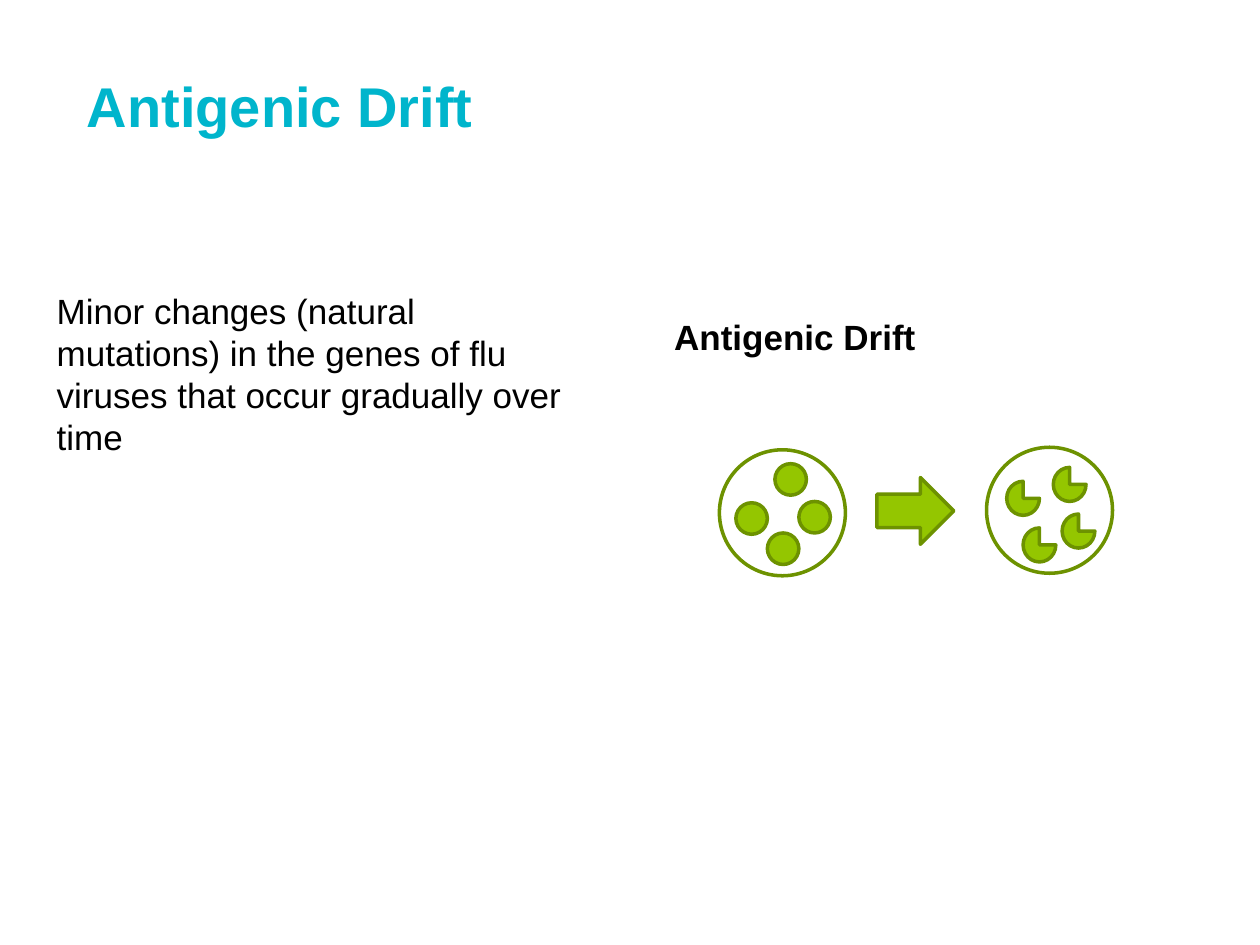
from pptx import Presentation
from pptx import util as u
from pptx.dml.color import RGBColor
from pptx.enum import shapes, text
from pptx.oxml.ns import qn

TITLE, BLACK, FILL, EDGE = "00B5CC", "000000", "94C600", "6D9200"
MSO = shapes.MSO_SHAPE


def rgb(value):
    return RGBColor.from_string(value)


class SlideBuilder:
    def __init__(self, prs, layout):
        self.font = "Arial"
        self.slide = prs.slides.add_slide(prs.slide_layouts[layout])

    def placeholder(self, idx, content, box, size, color, bold, anchor):
        sp = self.slide.placeholders[idx]
        sp.left, sp.top, sp.width, sp.height = map(u.Inches, box)
        tf = sp.text_frame
        tf.text = content
        tf.word_wrap = True
        tf.auto_size = text.MSO_AUTO_SIZE.NONE
        tf.vertical_anchor = anchor
        p = tf.paragraphs[0]
        p.alignment = text.PP_ALIGN.LEFT
        p.space_before = u.Pt(0)
        font = p.runs[0].font
        font.name, font.size, font.bold = self.font, u.Pt(size), bold
        font.color.rgb = rgb(color)
        return p

    def title(self, content, box):
        self.placeholder(0, content, box, 32, TITLE, True, text.MSO_ANCHOR.MIDDLE)

    def body(self, idx, content, box, bold=False):
        p = self.placeholder(idx, content, box, 20, BLACK, bold, text.MSO_ANCHOR.TOP)
        pPr = p._p.get_or_add_pPr()
        pPr.set("marL", "0")
        pPr.set("indent", "0")
        pPr.append(pPr.makeelement(qn("a:buNone"), {}))

    def shape(self, kind, x, y, w, h, fill=FILL, parent=None):
        owner = parent or self.slide
        sp = owner.shapes.add_shape(kind, *map(u.Inches, (x, y, w, h)))
        sp.shadow.inherit = False
        if fill:
            sp.fill.solid()
            sp.fill.fore_color.rgb = rgb(fill)
        else:
            sp.fill.background()
        sp.line.color.rgb = rgb(EDGE)
        sp.line.width = u.Pt(2)

    def virus(self, x, y, kind, size, antigens, parent=None):
        """Draw an outlined virus with its antigens inside."""
        self.shape(MSO.OVAL, x, y, 1, 1, fill=None, parent=parent)
        for ax, ay in antigens:
            self.shape(kind, ax, ay, *size, parent=parent)


def main():
    prs = Presentation()
    prs.slide_width, prs.slide_height = u.Inches(10), u.Inches(7.5)
    s = SlideBuilder(prs, layout=3)

    s.title("Antigenic Drift", (0.59, 0.21, 8.83, 1.25))
    s.body(1, "Minor changes (natural mutations) in the genes of flu viruses "
              "that occur gradually over time", (0.35, 2.25, 4.33, 3.64))
    s.body(2, "Antigenic Drift", (5.25, 2.45, 4.33, 3.64), bold=True)

    s.virus(5.71, 3.57, MSO.FLOWCHART_CONNECTOR, (0.25, 0.25),
            [(5.84, 3.99), (6.09, 4.23), (6.34, 3.98), (6.15, 3.68)],
            parent=s.slide.shapes.add_group_shape())
    s.shape(MSO.RIGHT_ARROW, 6.96, 3.79, 0.61, 0.53)
    s.virus(7.83, 3.55, MSO.PIE, (0.26, 0.27),
            [(7.99, 3.82), (8.12, 4.19), (8.36, 3.71), (8.43, 4.08)])

    prs.save("out.pptx")


if __name__ == "__main__":
    main()
